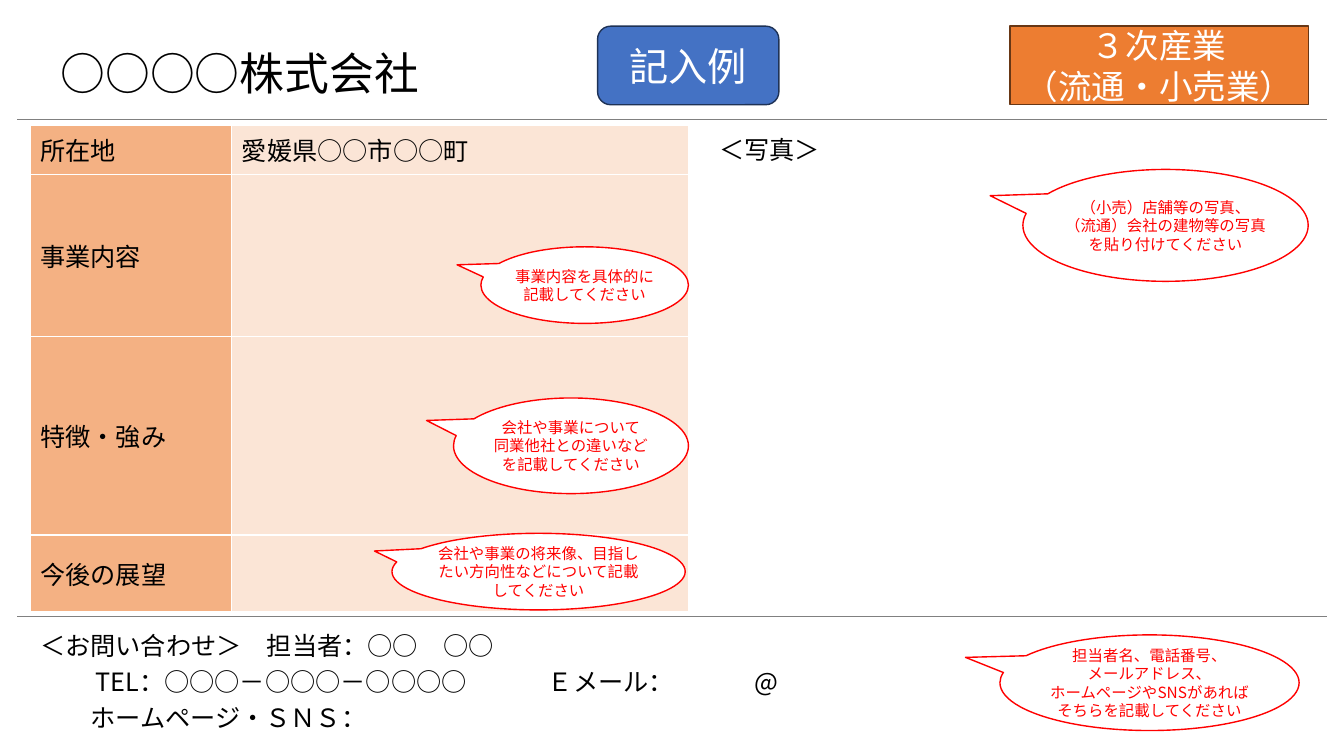
from lxml import etree
from pptx import Presentation
from pptx.dml.color import RGBColor
from pptx.enum.shapes import MSO_CONNECTOR, MSO_SHAPE
from pptx.enum.text import MSO_ANCHOR, MSO_AUTO_SIZE, PP_ALIGN
from pptx.oxml.ns import qn
from pptx.util import Cm, Pt

BLACK = RGBColor(0x00, 0x00, 0x00)
WHITE = RGBColor(0xFF, 0xFF, 0xFF)
RED = RGBColor(0xFF, 0x00, 0x00)
GRAY = RGBColor(0x80, 0x80, 0x80)
ORANGE = RGBColor(0xED, 0x7D, 0x31)
BROWN = RGBColor(0x68, 0x37, 0x15)
BLUE = RGBColor(0x44, 0x72, 0xC4)
NAVY = RGBColor(0x1E, 0x32, 0x56)
PEACH = RGBColor(0xF4, 0xB1, 0x83)
CREAM = RGBColor(0xFB, 0xE5, 0xD6)

RECT = MSO_SHAPE.RECTANGLE
ROUND = MSO_SHAPE.ROUNDED_RECTANGLE
BUBBLE = MSO_SHAPE.OVAL_CALLOUT
STRAIGHT = MSO_CONNECTOR.STRAIGHT
MIDDLE = MSO_ANCHOR.MIDDLE
LEFT, CENTER = PP_ALIGN.LEFT, PP_ALIGN.CENTER
FIT, FIXED = MSO_AUTO_SIZE.SHAPE_TO_FIT_TEXT, MSO_AUTO_SIZE.NONE

FONT = "Noto Sans CJK JP"
WIDTH, HEIGHT = 33.87, 19.05
MARGIN = 0.76


def write(frame, lines, size, color=BLACK, align=LEFT, space=None):
    for i, line in enumerate(lines):
        para = frame.paragraphs[0] if i == 0 else frame.add_paragraph()
        para.alignment = align
        if space:
            para.line_spacing = space
        run = para.add_run()
        run.text = line
        run.font.size = Pt(size)
        run.font.color.rgb = color
        run.font.name = FONT
        asian = etree.SubElement(run.font._element, qn("a:ea"))
        asian.set("typeface", FONT)


def set_tabs(para, stops):
    tabs = etree.SubElement(para._p.get_or_add_pPr(), qn("a:tabLst"))
    for stop in stops:
        etree.SubElement(tabs, qn("a:tab"), pos=str(Cm(stop)), algn="l")


def add_rule(slide, y):
    rule = slide.shapes.add_connector(STRAIGHT, Cm(0.43), Cm(y), Cm(33.43), Cm(y))
    rule.line.color.rgb = GRAY
    rule.line.width = Pt(0.5)
    etree.SubElement(rule._element.spPr, qn("a:effectLst"))


def add_label(slide, kind, box, lines, size, fill, edge, color=WHITE):
    shape = slide.shapes.add_shape(kind, *map(Cm, box))
    shape.shadow.inherit = False
    shape.fill.solid()
    shape.fill.fore_color.rgb = fill
    shape.line.color.rgb = edge
    shape.line.width = Pt(1)
    frame = shape.text_frame
    frame.word_wrap = True
    frame.vertical_anchor = MIDDLE
    write(frame, lines, size, color, CENTER)
    return shape


def add_bubble(slide, box, lines, tip=(-0.615, -0.265)):
    shape = add_label(slide, BUBBLE, box, lines, 11, WHITE, RED, RED)
    shape.adjustments[0], shape.adjustments[1] = tip
    frame = shape.text_frame
    frame.margin_left = frame.margin_right = 0
    frame.margin_top = frame.margin_bottom = 0


def add_text(slide, box, lines):
    frame = slide.shapes.add_textbox(*map(Cm, box)).text_frame
    frame.word_wrap = True
    frame.auto_size = FIT
    write(frame, lines, 18, space=1.2)
    return frame


def add_header(slide, box):
    x, y, w, h = box
    title = slide.shapes.title
    title.left, title.top = Cm(x + 0.51), Cm(y)
    title.width, title.height = Cm(23.34), Cm(2.49)
    frame = title.text_frame
    frame.word_wrap = True
    frame.auto_size = FIXED
    frame.vertical_anchor = MIDDLE
    write(frame, ["○○○○株式会社"], 32, space=0.9)
    add_label(slide, RECT, (x + w - 7.52, y, 7.52, 1.98),
              ["３次産業", "（流通・小売業）"], 24, ORANGE, BROWN)
    add_label(slide, ROUND, (x + 14.3, y, 4.57, 1.98), ["記入例"], 28, BLUE, NAVY)
    add_rule(slide, y + h)


def style_cell(cell, text, fill):
    cell.vertical_anchor = MIDDLE
    cell.fill.solid()
    cell.fill.fore_color.rgb = fill
    if text:
        write(cell.text_frame, [text], 18)
    props = cell._tc.get_or_add_tcPr()
    for i, side in enumerate(("a:lnL", "a:lnR", "a:lnT", "a:lnB")):
        edge = etree.Element(qn(side), w=str(Pt(1)))
        solid = etree.SubElement(edge, qn("a:solidFill"))
        etree.SubElement(solid, qn("a:srgbClr"), val=str(WHITE))
        props.insert(i, edge)


def add_profile(slide, box):
    """Company table with its hints along the right edge."""
    x, y, w, h = box
    rows = [("所在地", "愛媛県○○市○○町", 1.24), ("事業内容", "", 4.09),
            ("特徴・強み", "", 5), ("今後の展望", "", 1.93)]
    table = slide.shapes.add_table(len(rows), 2, *map(Cm, box)).table
    table.columns[0].width = Cm(5.08)
    table.columns[1].width = Cm(w - 5.08)
    for i, (name, value, tall) in enumerate(rows):
        table.rows[i].height = Cm(tall)
        style_cell(table.cell(i, 0), name, PEACH)
        style_cell(table.cell(i, 1), value, CREAM)
    right = x + w
    add_bubble(slide, (right - 5.23, y + 3.07, 5.23, 1.93),
               ["事業内容を具体的に", "記載してください"])
    add_bubble(slide, (right - 5.92, y + 6.88, 5.92, 2.41),
               ["会社や事業について", "同業他社との違いなど", "を記載してください"])
    add_bubble(slide, (right - 7.47, y + 10.29, 7.39, 1.93),
               ["会社や事業の将来像、目指したい方向性などについて記載してください"],
               (-0.56, -0.269))


def add_photo(slide, box):
    x, y, w, h = box
    add_text(slide, (x, y, 4.93, 1.12), ["＜写真＞"])
    add_bubble(slide, (x + w - 7.19, y + 1.15, 7.19, 2.82),
               ["（小売）店舗等の写真、", "（流通）会社の建物等の写真を貼り付けてください"])


def add_contact(slide, box):
    x, y, w, h = box
    add_rule(slide, y - 0.06)
    frame = add_text(slide, box, [
        "＜お問い合わせ＞　担当者：○○　○○",
        "\tTEL：○○○－○○○－○○○○\tＥメール：\t@",
        "\tホームページ・ＳＮＳ："])
    set_tabs(frame.paragraphs[1], (1.4, 12.8, 18))
    set_tabs(frame.paragraphs[2], (1.27,))
    add_bubble(slide, (x + w - 7.77, y + 0.4, 7.54, 2.41),
               ["担当者名、電話番号、", "メールアドレス、",
                "ホームページやSNSがあればそちらを記載してください"])


def main():
    deck = Presentation()
    deck.slide_width, deck.slide_height = Cm(WIDTH), Cm(HEIGHT)
    slide = deck.slides.add_slide(deck.slide_layouts[5])
    span = 32.21
    add_header(slide, (MARGIN, 0.66, span, 2.34))
    add_profile(slide, (MARGIN, 3.15, 16.59, 12.26))
    add_photo(slide, (17.88, 3.12, 15.09, 12.3))
    add_contact(slide, (MARGIN, 15.6, span, 2.97))
    deck.save("out.pptx")


if __name__ == "__main__":
    main()
